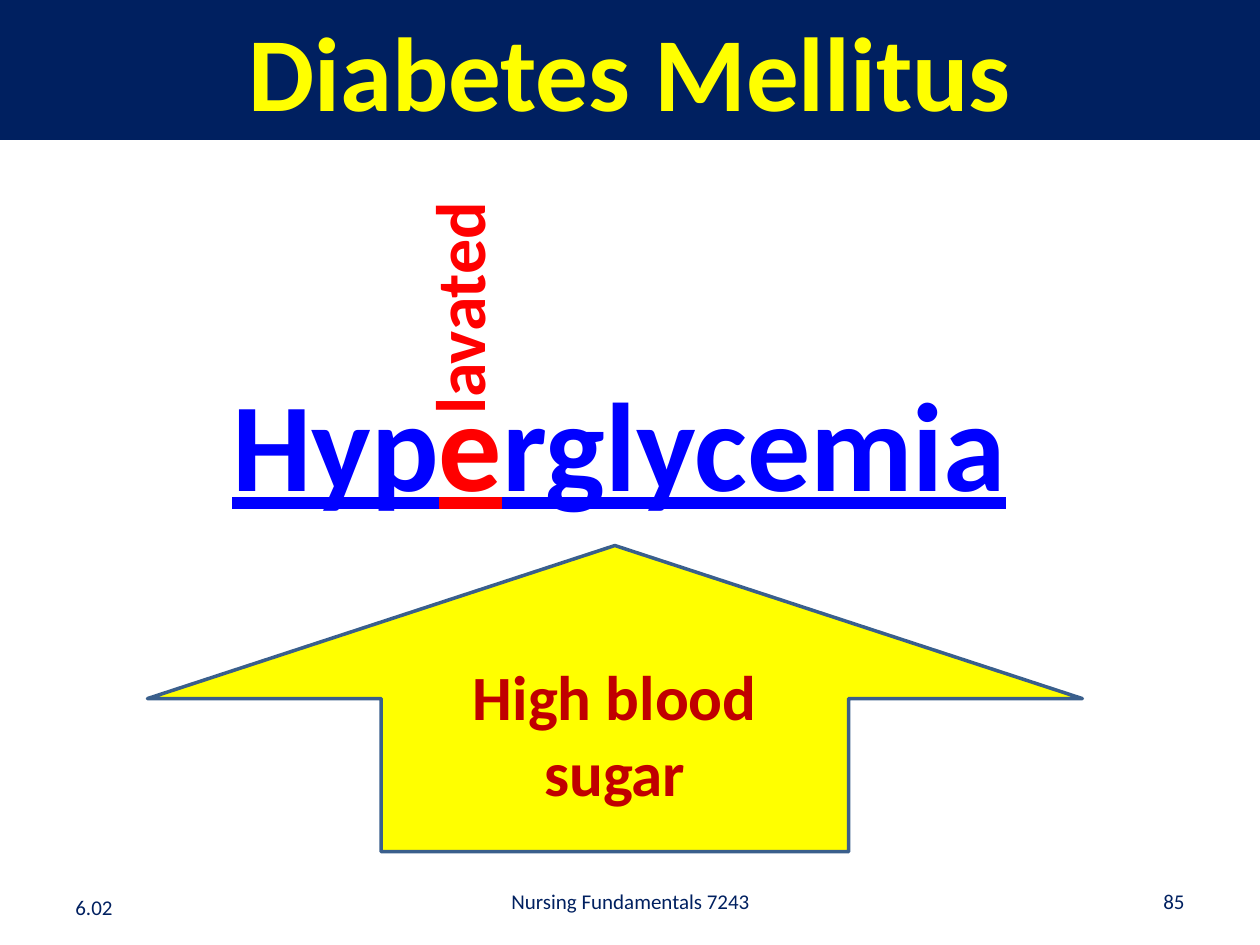
from dataclasses import dataclass
from typing import Optional

from pptx import Presentation
from pptx.dml.color import RGBColor
from pptx.enum.shapes import MSO_SHAPE
from pptx.enum.text import MSO_ANCHOR, PP_ALIGN
from pptx.util import Inches, Pt

NAVY = RGBColor(0x00, 0x20, 0x60)
YELLOW = RGBColor(0xFF, 0xFF, 0x00)
BLUE = RGBColor(0x00, 0x00, 0xFF)
RED = RGBColor(0xFF, 0x00, 0x00)
DARK_RED = RGBColor(0xC0, 0x00, 0x00)
STEEL = RGBColor(0x3A, 0x5F, 0x8C)
LEFT, CENTER, RIGHT = PP_ALIGN.LEFT, PP_ALIGN.CENTER, PP_ALIGN.RIGHT
TOP, MIDDLE = MSO_ANCHOR.TOP, MSO_ANCHOR.MIDDLE
RECTANGLE, UP_ARROW = MSO_SHAPE.RECTANGLE, MSO_SHAPE.UP_ARROW
FONT = "Calibri"


@dataclass
class Label:
    box: tuple[float, float, float, float]
    colored_texts: list[tuple[str, RGBColor]]
    size: int
    align: PP_ALIGN = CENTER
    anchor: MSO_ANCHOR = TOP
    bold: bool = True
    underline: bool = False
    line_spacing: Optional[float] = None
    vertical: bool = False


def write_text(shape, label: Label) -> None:
    text_frame = shape.text_frame
    text_frame.word_wrap = not label.vertical
    text_frame.vertical_anchor = label.anchor
    if label.vertical:
        text_frame._txBody.bodyPr.set("vert", "vert270")
    paragraph = text_frame.paragraphs[0]
    paragraph.alignment = label.align
    if label.line_spacing:
        paragraph.line_spacing = label.line_spacing
    for text, color in label.colored_texts:
        run = paragraph.add_run()
        run.text = text
        run.font.name = FONT
        run.font.size = Pt(label.size)
        run.font.bold = label.bold
        run.font.underline = label.underline
        run.font.color.rgb = color


def add_label(slide, label: Label) -> None:
    write_text(slide.shapes.add_textbox(*map(Inches, label.box)), label)


def add_filled_shape(slide, kind: MSO_SHAPE, box: tuple[float, ...], fill: RGBColor):
    shape = slide.shapes.add_shape(kind, *map(Inches, box))
    shape.shadow.inherit = False
    shape.fill.solid()
    shape.fill.fore_color.rgb = fill
    shape.line.fill.background()
    return shape


FOOTERS = [
    Label((3.42, 6.95, 3.17, 0.4), [("Nursing Fundamentals 7243", NAVY)], 12, CENTER, MIDDLE, False),
    Label((7.17, 6.95, 2.33, 0.4), [("85", NAVY)], 12, RIGHT, MIDDLE, False),
    Label((0.5, 7, 2.33, 0.4), [("6.02", NAVY)], 12, LEFT, MIDDLE, False),
]
TITLE = Label((0, 0, 10, 1.11), [("Diabetes Mellitus", YELLOW)], 60)
TERM = Label(
    (0.83, 3.08, 8.17, 1.11),
    [("Hyp", BLUE), ("e", RED), ("rglycemia", BLUE)],
    72, underline=True, line_spacing=0.8,
)
MEANING = Label((3.17, 5.17, 3.42, 1.31), [("High blood sugar", DARK_RED)], 36)
MNEMONIC = Label((3.25, 1.58, 0.88, 1.81), [("lavated", RED)], 40, LEFT, vertical=True)


def main() -> None:
    presentation = Presentation()
    presentation.slide_width = Inches(10)
    presentation.slide_height = Inches(7.5)
    slide = presentation.slides.add_slide(presentation.slide_layouts[6])

    # Footer
    for footer in FOOTERS:
        add_label(slide, footer)

    # Title band
    write_text(add_filled_shape(slide, RECTANGLE, TITLE.box, NAVY), TITLE)

    # Term, with the arrow pointing up to it
    add_label(slide, TERM)
    arrow = add_filled_shape(slide, UP_ARROW, (1.17, 4.33, 7.42, 2.43), YELLOW)
    arrow.line.color.rgb = STEEL
    arrow.line.width = Pt(2)

    # Meaning and memory aid
    add_label(slide, MEANING)
    add_label(slide, MNEMONIC)

    presentation.save("out.pptx")


if __name__ == "__main__":
    main()
